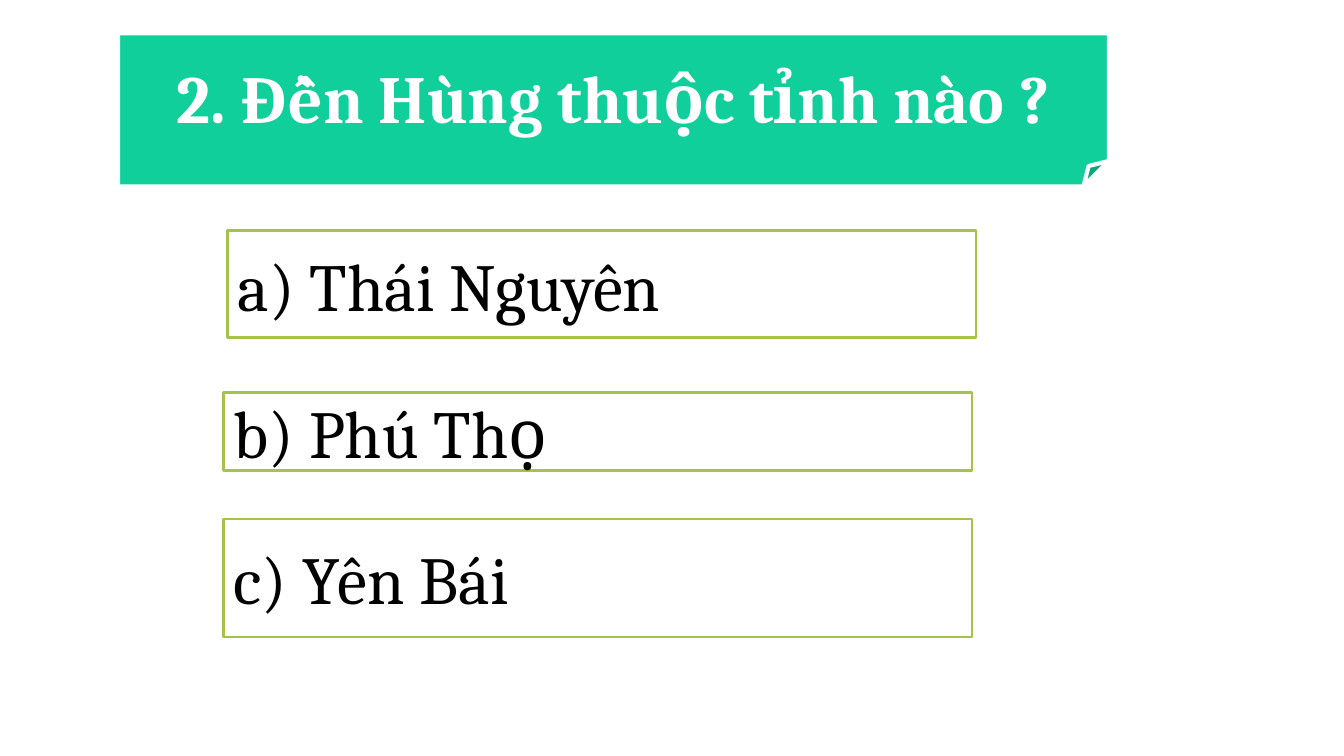
from dataclasses import dataclass

from pptx import Presentation
from pptx.dml.color import RGBColor
from pptx.enum.shapes import MSO_SHAPE
from pptx.enum.text import MSO_ANCHOR, PP_ALIGN
from pptx.slide import Slide
from pptx.util import Emu, Pt

EMU_PER_PX = 9144


@dataclass(frozen=True)
class Theme:
    green: RGBColor = RGBColor(0x10, 0xCF, 0x9B)
    lime: RGBColor = RGBColor(0xA5, 0xC2, 0x49)
    white: RGBColor = RGBColor(0xFF, 0xFF, 0xFF)
    black: RGBColor = RGBColor(0x00, 0x00, 0x00)
    font: str = "Cambria"
    text_size: int = 48


THEME = Theme()


@dataclass(frozen=True)
class Box:
    text: str
    left: int
    top: int
    width: int
    height: int


@dataclass(frozen=True)
class Style:
    preset: MSO_SHAPE
    fill: RGBColor
    line: RGBColor
    line_width: int
    color: RGBColor
    align: PP_ALIGN
    bold: bool


QUESTION_STYLE = Style(MSO_SHAPE.FOLDED_CORNER, THEME.green, THEME.white, 3,
                       THEME.white, PP_ALIGN.CENTER, True)
ANSWER_STYLE = Style(MSO_SHAPE.RECTANGLE, THEME.white, THEME.lime, 2,
                     THEME.black, PP_ALIGN.LEFT, False)

QUESTION = Box("2. Đền Hùng thuộc tỉnh nào ?", 117, 33, 983, 152)
ANSWERS = (
    Box("a) Thái Nguyên", 226, 229, 742, 106),
    Box("b) Phú Thọ", 222, 389, 742, 78),
    Box("c) Yên Bái", 222, 515, 742, 117),
)


def px(value: int) -> Emu:
    return Emu(value * EMU_PER_PX)


def add_box(s: Slide, box: Box, style: Style) -> None:
    sp = s.shapes.add_shape(style.preset, px(box.left), px(box.top),
                            px(box.width), px(box.height))
    sp.shadow.inherit = False
    sp.fill.solid()
    sp.fill.fore_color.rgb = style.fill
    sp.line.color.rgb = style.line
    sp.line.width = Pt(style.line_width)
    tf = sp.text_frame
    tf.word_wrap = True
    tf.vertical_anchor = MSO_ANCHOR.MIDDLE
    p = tf.paragraphs[0]
    p.text = box.text
    p.alignment = style.align
    p.font.name = THEME.font
    p.font.size = Pt(THEME.text_size)
    p.font.bold = style.bold
    p.font.color.rgb = style.color


def main() -> None:
    prs = Presentation()
    prs.slide_width, prs.slide_height = px(1333), px(750)
    s = prs.slides.add_slide(prs.slide_layouts[6])
    add_box(s, QUESTION, QUESTION_STYLE)
    for answer in ANSWERS:
        add_box(s, answer, ANSWER_STYLE)
    prs.save("out.pptx")


if __name__ == "__main__":
    main()
